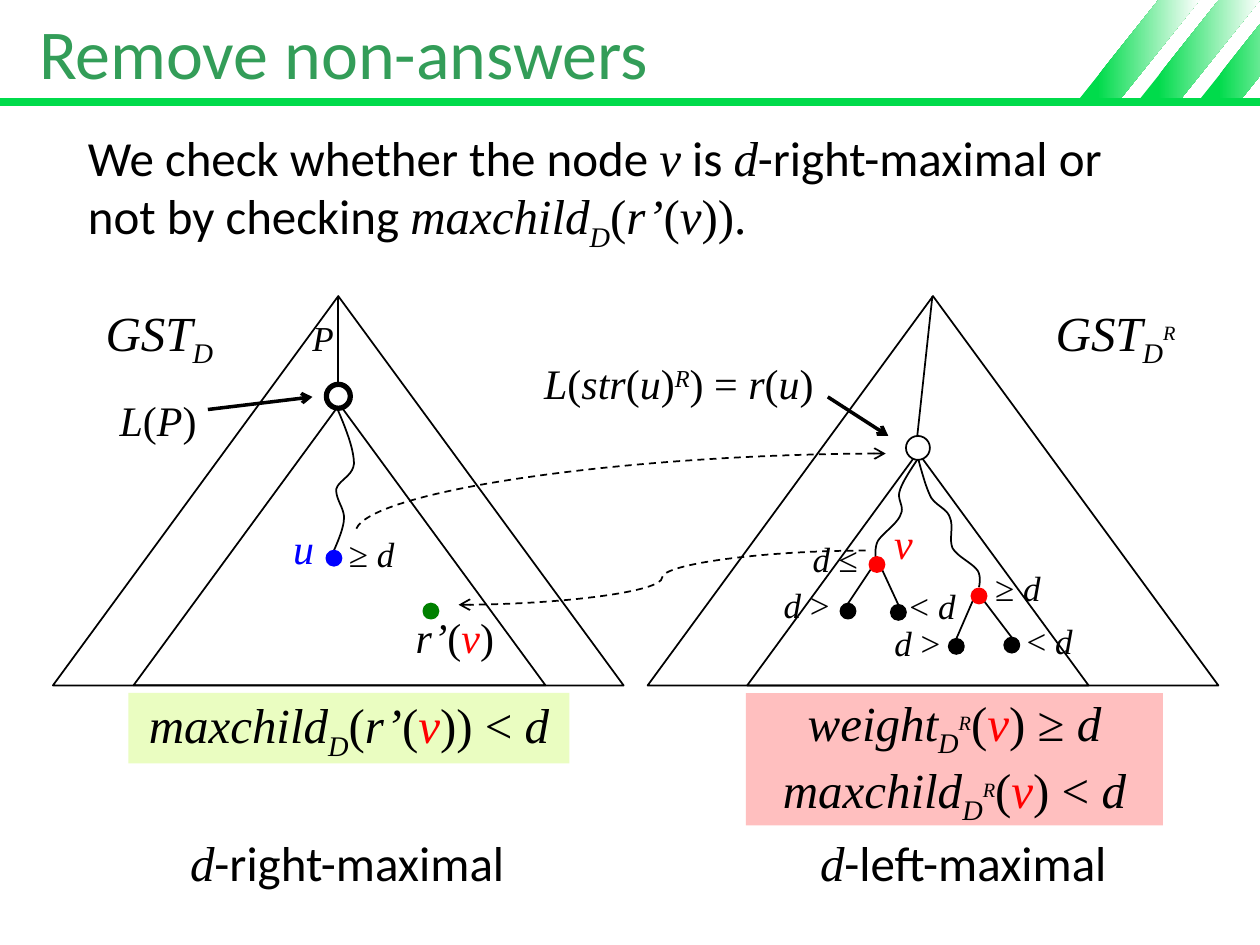
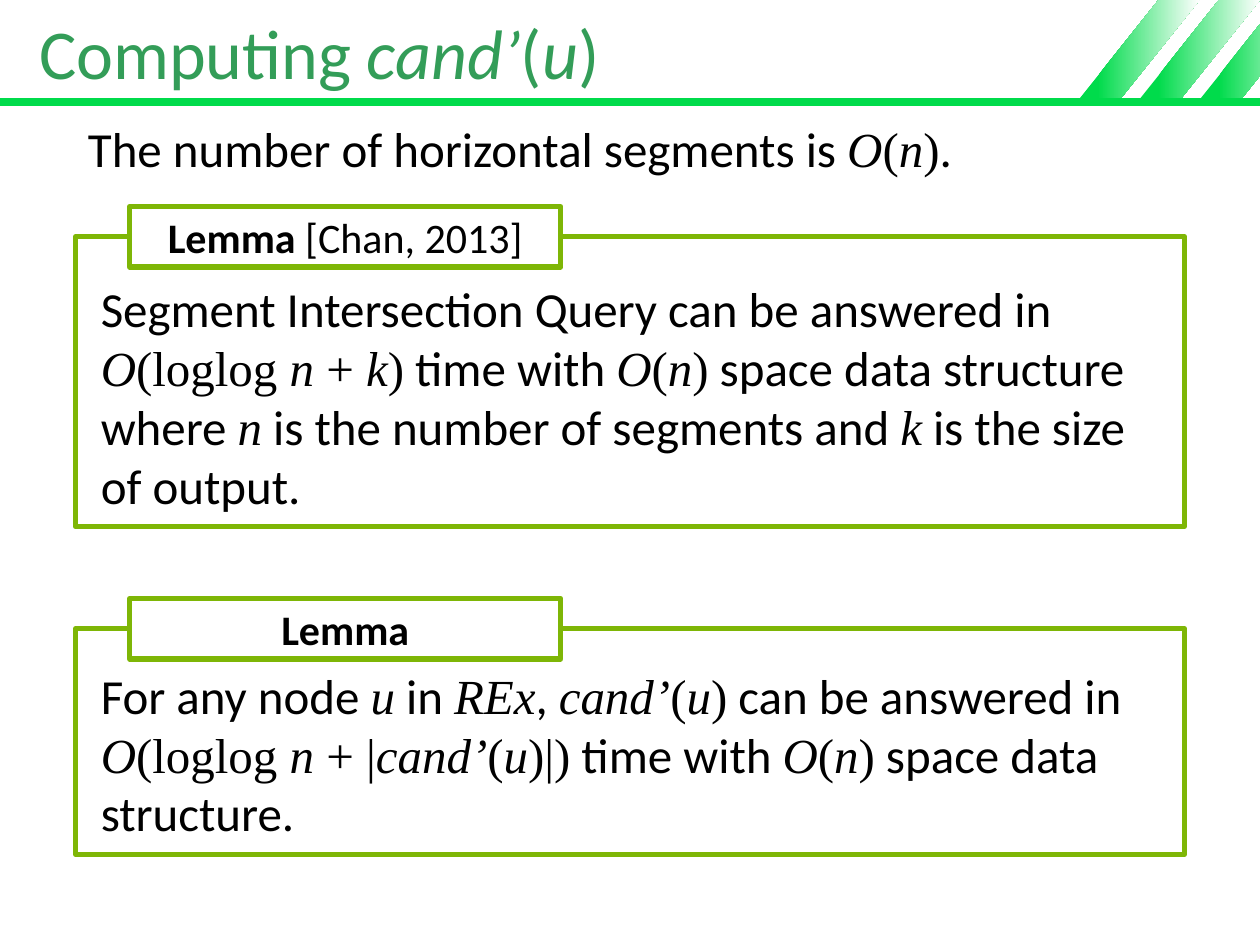
import dataclasses
import itertools

import pptx
import pptx.dml.color
import pptx.enum.dml
import pptx.enum.shapes
import pptx.enum.text
import pptx.oxml
import pptx.oxml.ns
import pptx.util

SHAPE = pptx.enum.shapes.MSO_SHAPE
CONNECTOR = pptx.enum.shapes.MSO_CONNECTOR
ALIGN = pptx.enum.text.PP_ALIGN
ANCHOR = pptx.enum.text.MSO_ANCHOR
AUTO_SIZE = pptx.enum.text.MSO_AUTO_SIZE


@dataclasses.dataclass(frozen=True)
class Theme:
    text_font: str = "Calibri"
    math_font: str = "Times New Roman"
    title_size: int = 40
    body_size: int = 28
    label_size: int = 24
    small_size: int = 20
    black: str = "000000"
    white: str = "FFFFFF"
    title: str = "339D58"
    band: str = "00DB4B"
    frame: str = "7EB606"
    red: str = "FF0000"
    blue: str = "0000FF"
    green: str = "008000"
    pale_green: str = "EAFDC1"
    pale_red: str = "FFBFBF"


THEME = Theme()
COLUMNS, ROWS = 100, 75
CELL = pptx.util.Inches(0.1)  # one column or row of the slide grid


def grid(*cells):
    """Turn columns and rows into lengths."""
    return [pptx.util.Emu(round(cell * CELL)) for cell in cells]


def rgb(colour):
    return pptx.dml.color.RGBColor.from_string(colour)


# Text: $...$ is mathematics (letters slant, _x lowers, ^x raises, @x is red,
# `...` stays upright) and *...* is bold.

def math_letters(text, font, colour, size, raised_size):
    mark, upright = "", False
    for letter in text:
        if letter == "`":
            upright = not upright
        elif letter in "_^@":
            mark = letter
        else:
            slanted = (letter.isalpha() or letter == "’") and not upright
            yield letter, (font, raised_size if mark == "^" else size, slanted, False,
                           THEME.red if mark == "@" else colour,
                           {"_": -25000, "^": 30000}.get(mark, 0))
            mark = ""


def styled_letters(text, colour, size, math_font, raised_size):
    for index, part in enumerate(text.split("$")):
        if index % 2:
            yield from math_letters(part, math_font, colour, size, raised_size)
        else:
            for piece_index, piece in enumerate(part.split("*")):
                style = (THEME.text_font, size, False, piece_index % 2 == 1, colour, 0)
                yield from ((letter, style) for letter in piece)


def write(frame, text, size=THEME.body_size, colour=THEME.black, align=ALIGN.LEFT,
          anchor=ANCHOR.TOP, wrap=True, math_font=THEME.math_font, raised_size=None):
    frame.word_wrap = wrap
    frame.vertical_anchor = anchor
    for index, line in enumerate(text.split("\n")):
        paragraph = frame.add_paragraph() if index else frame.paragraphs[0]
        paragraph.alignment = align
        letters = styled_letters(line, colour, size, math_font, raised_size or size)
        for style, group in itertools.groupby(letters, key=lambda item: item[1]):
            run = paragraph.add_run()
            run.text = "".join(letter for letter, _ in group)
            font, run_size, italic, bold, run_colour, baseline = style
            run.font.name, run.font.size = font, pptx.util.Pt(run_size)
            run.font.italic, run.font.bold = italic, bold
            run.font.color.rgb = rgb(run_colour)
            if baseline:
                run._r.get_or_add_rPr().set("baseline", str(baseline))


def add_label(slide, left, top, width, text, size=THEME.label_size, wrap=False, **style):
    height = size * 1.22 / 7.2 + 1
    box = slide.shapes.add_textbox(*grid(left, top, width, height))
    write(box.text_frame, text, size=size, wrap=wrap, **style)
    box.text_frame.auto_size = AUTO_SIZE.SHAPE_TO_FIT_TEXT


# Shapes and lines

def paint(shape, fill=None, line=None, weight=1):
    shape.shadow.inherit = False
    if fill:
        shape.fill.solid()
        shape.fill.fore_color.rgb = rgb(fill)
    else:
        shape.fill.background()
    if line:
        shape.line.color.rgb = rgb(line)
        shape.line.width = pptx.util.Pt(weight)
    else:
        shape.line.fill.background()


def add_box(slide, kind, left, top, width, height, **look):
    shape = slide.shapes.add_shape(kind, *grid(left, top, width, height))
    paint(shape, **look)
    return shape


def add_triangle(slide, left, top, width, height):
    add_box(slide, SHAPE.ISOSCELES_TRIANGLE, left, top, width, height, line=THEME.black)


def add_node(slide, x, y, fill, diameter=1.2, line=None, weight=1):
    add_box(slide, SHAPE.OVAL, x - diameter / 2, y - diameter / 2, diameter, diameter,
            fill=fill, line=line or fill, weight=weight)


def add_line(slide, begin, end, kind=CONNECTOR.STRAIGHT, colour=THEME.black, weight=1,
             arrow=None, dashed=False):
    connector = slide.shapes.add_connector(kind, *grid(*begin, *end))
    connector.line.color.rgb = rgb(colour)
    connector.line.width = pptx.util.Pt(weight)
    if dashed:
        connector.line.dash_style = pptx.enum.dml.MSO_LINE.DASH
    properties = connector.element.spPr
    namespace = pptx.oxml.ns.nsdecls("a")
    if arrow:
        outline = properties.find(pptx.oxml.ns.qn("a:ln"))
        outline.append(pptx.oxml.parse_xml(f'<a:{arrow} {namespace} type="arrow"/>'))
    properties.append(pptx.oxml.parse_xml(f"<a:effectLst {namespace}/>"))
    return connector


def add_wavy_path(slide, start, *curves, steps=10):
    """Draw a chain of cubic curves, each given by two handles and an end."""
    points = []
    begin = start
    for first, second, end in curves:
        for step in range(1, steps + 1):
            t = step / steps
            weights = ((1 - t) ** 3, 3 * t * (1 - t) ** 2, 3 * t * t * (1 - t), t ** 3)
            corners = zip(begin, first, second, end)
            points.append(grid(*(sum(w * c for w, c in zip(weights, axis))
                                 for axis in corners)))
        begin = end
    builder = slide.shapes.build_freeform(*grid(*start), scale=1.0)
    builder.add_line_segments(points, close=False)
    paint(builder.convert_to_shape(), line=THEME.black)


# Shared slide parts

def add_header_band(slide):
    """Draw stripes and rule, then move them to the layout under the title."""
    parts = []
    for left in (95.3, 90.5, 85.7):
        stripe = add_box(slide, SHAPE.PARALLELOGRAM, left, 0, 9.5, 7.8)
        stripe.adjustments[0] = 0.8
        stripe.fill.gradient()
        stripe.fill.gradient_angle = 0
        stops = ((0.15, THEME.band), (1, THEME.white))
        for stop, (position, colour) in zip(stripe.fill.gradient_stops, stops):
            stop.position, stop.color.rgb = position, rgb(colour)
        parts.append(stripe)
    parts.append(add_line(slide, (0, 8.1), (COLUMNS, 8.1), colour=THEME.band, weight=4.5))
    for index, part in enumerate(parts):
        slide.slide_layout.shapes.element.insert(2 + index, part.element)


def add_titled_slide(presentation, title):
    slide = presentation.slides.add_slide(presentation.slide_layouts[5])
    placeholder = slide.shapes.title
    placeholder.left, placeholder.top, placeholder.width, placeholder.height = grid(
        2.1, 0, 88, 8.1)
    write(placeholder.text_frame, title, size=THEME.title_size, colour=THEME.title,
          anchor=ANCHOR.MIDDLE, math_font=THEME.text_font)
    placeholder.text_frame.auto_size = AUTO_SIZE.NONE
    return slide


def add_body(slide, top, height, text):
    box = slide.shapes.add_textbox(*grid(6, top, 88, height))
    write(box.text_frame, text)


def add_formula(slide, left, width, height, fill, text):
    box = add_box(slide, SHAPE.RECTANGLE, left, 55, width, height, fill=fill)
    write(box.text_frame, text, align=ALIGN.CENTER, anchor=ANCHOR.MIDDLE,
          raised_size=THEME.small_size)


def add_lemma(slide, top, height, heading, text):
    frame = add_box(slide, SHAPE.RECTANGLE, 6, top, 88, height, line=THEME.frame, weight=3)
    body = frame.text_frame
    body.margin_left, body.margin_top, body.margin_right, body.margin_bottom = grid(
        2, 0.5, 1.6, 1)
    write(body, text, anchor=ANCHOR.BOTTOM)
    tab = add_box(slide, SHAPE.RECTANGLE, 10.3, top - 2.4, 34.2, 4.8,
                  fill=THEME.white, line=THEME.frame, weight=3)
    write(tab.text_frame, heading, size=THEME.label_size, align=ALIGN.CENTER,
          anchor=ANCHOR.MIDDLE)


# Slide contents

def draw_forward_tree(slide):
    add_triangle(slide, 4.2, 23.5, 45.3, 30.9)
    add_triangle(slide, 10.6, 32.1, 32.7, 22.3)
    add_line(slide, (26.8, 23.5), (26.8, 30.4))
    add_wavy_path(slide, (26.8, 32.5),
                  ((27.5, 34.1), (28.1, 35.7), (28.1, 36.8)),
                  ((28, 37.8), (26.9, 38.1), (26.7, 38.8)),
                  ((26.6, 39.6), (27.4, 40.4), (27.3, 41.2)),
                  ((27.3, 42), (26.5, 43.7), (26.5, 43.7)))
    add_node(slide, 26.85, 31.45, THEME.white, diameter=1.9, line=THEME.black, weight=3)
    add_node(slide, 26.5, 44.3, THEME.blue)
    add_node(slide, 34.2, 48.5, THEME.green)
    add_line(slide, (16.5, 32.5), (24.8, 31.5), weight=2, arrow="tailEnd")
    add_label(slide, 7.4, 23.5, 11.5, "$GST_D$", size=THEME.body_size)
    add_label(slide, 23.8, 24.6, 3.9, "$P$", size=THEME.small_size)
    add_label(slide, 26.7, 41.8, 6, "$≥ d$", size=THEME.small_size)
    add_label(slide, 7.4, 30.8, 10.3, "$L(P)$", wrap=True, align=ALIGN.CENTER)
    add_label(slide, 20.5, 41, 7.2, "$u$", wrap=True, align=ALIGN.CENTER, colour=THEME.blue)
    add_label(slide, 32, 48, 8.8, "$r’(@v)$", wrap=True)


def draw_reverse_tree(slide):
    add_triangle(slide, 51.4, 23.5, 45.3, 30.9)
    add_triangle(slide, 59.3, 35.9, 27.1, 18.5)
    add_line(slide, (74, 23.5), (72.8, 34.6))
    add_wavy_path(slide, (72.8, 36.5),
                  ((72.2, 37.4), (71.6, 38.3), (71.4, 39)),
                  ((71.2, 39.7), (71.8, 40.2), (71.5, 40.8)),
                  ((71.3, 41.5), (70.1, 42.3), (69.7, 42.9)),
                  ((69.4, 43.4), (69.5, 44.2), (69.5, 44.2)))
    add_wavy_path(slide, (72.9, 36.5),
                  ((73.2, 37.6), (73.5, 38.7), (73.9, 39.5)),
                  ((74.4, 40.2), (75.2, 40.4), (75.4, 41.1)),
                  ((75.7, 41.8), (75.3, 42.8), (75.6, 43.5)),
                  ((76, 44.2), (77.2, 44.7), (77.6, 45.3)),
                  ((77.9, 45.8), (77.7, 46.6), (77.7, 46.6)))
    add_node(slide, 72.85, 35.55, THEME.white, diameter=1.9, line=THEME.black)
    # Each red node has two black children
    families = (((69.6, 44.8), (67.3, 48.5), (71.3, 48.6)),
                ((77.7, 47.3), (75.9, 51.3), (80.3, 51.2)))
    for (x, y), *children in families:
        for side, (child_x, child_y) in zip((-0.5, 0.4), children):
            add_line(slide, (x + side, y + 0.4), (child_x, child_y - 0.6))
            add_node(slide, child_x, child_y, THEME.black)
        add_node(slide, x, y, THEME.red)
    bounds = ((78, 44.5, 6, "≥ d"), (63.5, 42.2, 5.9, "d ≤"), (61.2, 45.8, 6.2, "d >"),
              (70, 48.8, 6.9, "d >"), (71.2, 45.9, 6.3, "< d"), (80.5, 48.7, 6.3, "< d"))
    for left, top, width, bound in bounds:
        add_label(slide, left, top, width, f"${bound}$", size=THEME.small_size)
    add_line(slide, (65.7, 31.5), (70.5, 34.6), weight=2, arrow="tailEnd")
    add_label(slide, 82.8, 23.5, 12.5, "$GST_D^R$", size=THEME.body_size,
              raised_size=THEME.small_size)
    add_label(slide, 42.2, 27.9, 28.8, "$L(str(u)^R) = r(u)$", wrap=True)
    add_label(slide, 68.1, 40.6, 7.2, "$@v$", wrap=True, align=ALIGN.CENTER)


def draw_links_between_trees(slide):
    link = add_line(slide, (70.3, 36), (28.2, 42.3), kind=CONNECTOR.CURVE,
                    arrow="headEnd", dashed=True)
    link.element.spPr.find(pptx.oxml.ns.qn("a:prstGeom")).set("prst", "curvedConnector2")
    add_line(slide, (68.7, 43.7), (36.4, 48), kind=CONNECTOR.CURVE,
             arrow="tailEnd", dashed=True)


def fill_non_answers_slide(slide):
    add_body(slide, 9.6, 11.4, "We check whether the node $v$ is $d$-right-maximal or not "
             "by checking $maxchild_D(r’(v)).$")
    draw_forward_tree(slide)
    draw_reverse_tree(slide)
    draw_links_between_trees(slide)
    add_formula(slide, 10.2, 35, 5.6, THEME.pale_green, "$maxchild_D(r’(@v)) < d$")
    add_formula(slide, 59.2, 33.1, 10.5, THEME.pale_red,
                "$weight_D^R(@v) ≥ d$\n$maxchild_D^R(@v) < d$")
    for left, width, side in ((14.1, 27.8, "right"), (64.1, 25.5, "left")):
        add_label(slide, left, 65.6, width, f"$d$-{side}-maximal", size=THEME.body_size)


def fill_candidates_slide(slide):
    add_body(slide, 8.9, 6.7, "The number of horizontal segments is $O(n)$.")
    add_lemma(slide, 18.8, 23, "*Lemma *[Chan, 2013]",
              "Segment Intersection Query can be answered in $O(`loglog` n + k)$ time with "
              "$O(n)$ space data structure\nwhere $n$ is the number of segments and $k$ is "
              "the size of output.")
    add_lemma(slide, 49.9, 17.9, "*Lemma*",
              "For any node $u$ in $REx$, $cand’(u)$ can be answered in "
              "$O(`loglog` n + |cand’(u)|)$ time with $O(n)$ space data structure.")


def main():
    presentation = pptx.Presentation()
    presentation.slide_width, presentation.slide_height = grid(COLUMNS, ROWS)
    non_answers = add_titled_slide(presentation, "Remove non-answers")
    add_header_band(non_answers)
    fill_non_answers_slide(non_answers)
    fill_candidates_slide(add_titled_slide(presentation, "Computing $cand’(u)$"))
    presentation.save("out.pptx")


if __name__ == "__main__":
    main()
